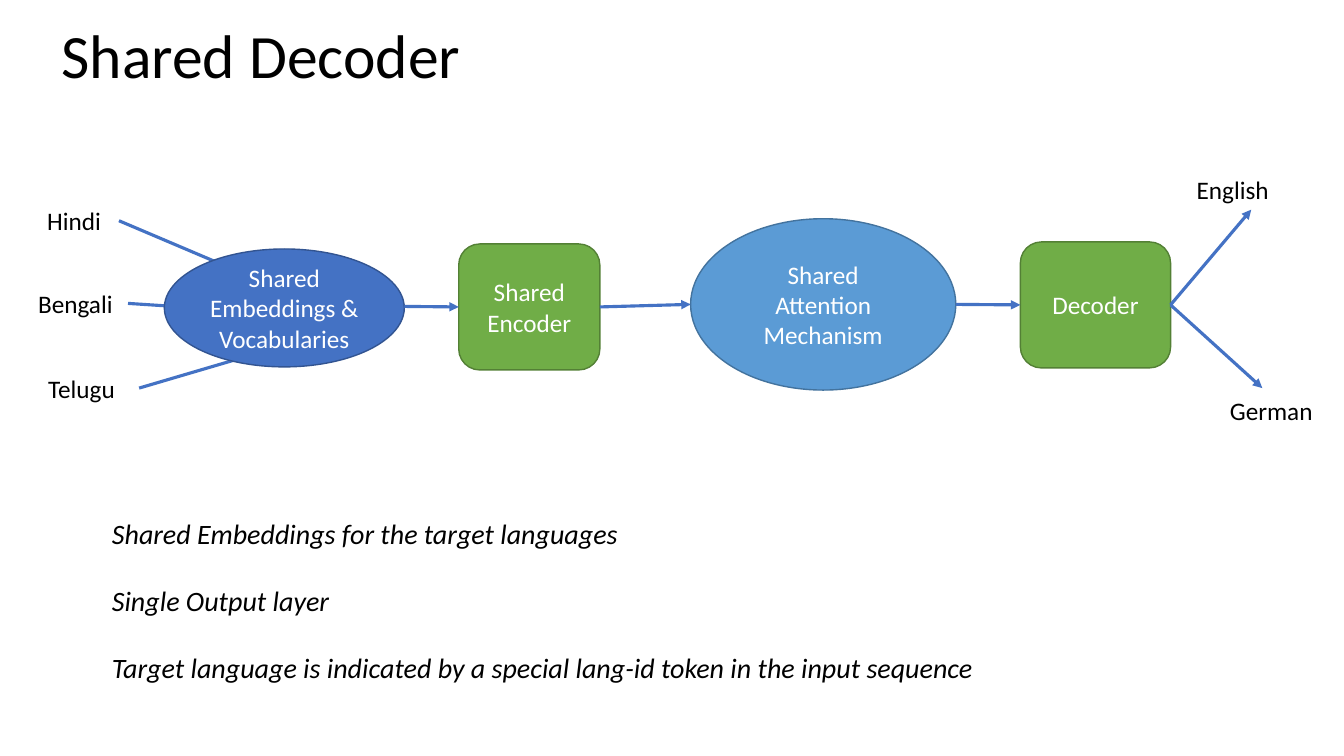
"""Build the Shared Decoder slide: a translation pipeline with three remarks."""
from lxml.etree import SubElement
from pptx import Presentation
from pptx.dml.color import RGBColor
from pptx.enum.shapes import MSO_CONNECTOR as CONN, MSO_SHAPE as SHAPE
from pptx.enum.text import MSO_ANCHOR as ANCHOR, MSO_AUTO_SIZE as FIT, PP_ALIGN as ALIGN
from pptx.oxml.ns import qn
from pptx.util import Inches, Pt

BLACK = RGBColor(0x00, 0x00, 0x00)
WHITE = RGBColor(0xFF, 0xFF, 0xFF)
BLUE = RGBColor(0x44, 0x72, 0xC4)
DARK_BLUE = RGBColor(0x32, 0x54, 0x91)
SKY = RGBColor(0x5B, 0x9B, 0xD5)
DARK_SKY = RGBColor(0x43, 0x73, 0x9E)
GREEN = RGBColor(0x70, 0xAD, 0x47)
DARK_GREEN = RGBColor(0x53, 0x80, 0x35)


def write(sp, text, size=18, color=BLACK, align=ALIGN.LEFT, anchor=ANCHOR.TOP,
          italic=False, spacing=1.0, fit=FIT.NONE):
    tf = sp.text_frame
    tf.word_wrap = True
    tf.auto_size = fit
    tf.vertical_anchor = anchor
    tf.text = text
    for p in tf.paragraphs:
        p.alignment = align
        p.line_spacing = spacing
        p.space_before = Pt(0)
        for r in p.runs:
            r.font.name = "Calibri"
            r.font.size = Pt(size)
            r.font.italic = italic
            r.font.color.rgb = color


def add_arrow(start, end, source=None, target=None):
    c = s.shapes.add_connector(CONN.STRAIGHT, *map(Inches, start + end))
    if source is not None:
        c.begin_connect(source, 3)
    if target is not None:
        c.end_connect(target, 1)
    c.line.color.rgb = BLUE
    c.line.width = Pt(2.25)
    SubElement(c.line._get_or_add_ln(), qn("a:tailEnd"), type="triangle")
    SubElement(c._element.spPr, qn("a:effectLst"))


prs = Presentation()
prs.slide_width, prs.slide_height = Inches(13.33), Inches(7.5)
s = prs.slides.add_slide(prs.slide_layouts[1])

title, body = s.placeholders
title.left, title.top, title.width, title.height = map(Inches, (0.51, 0.11, 11.5, 0.94))
write(title, "Shared Decoder", size=44, anchor=ANCHOR.MIDDLE, spacing=0.9)

body.left, body.top, body.width, body.height = map(Inches, (1.01, 4.74, 11, 2.03))
remarks = [
    "Shared Embeddings for the target languages",
    "Single Output layer",
    "Target language is indicated by a special lang-id token in the input sequence",
]
write(body, "\n".join(remarks), size=20, italic=True, spacing=2.0)
for p in body.text_frame.paragraphs:
    pPr = p._p.get_or_add_pPr()
    pPr.set("marL", "0")
    pPr.set("indent", "0")
    SubElement(pPr, qn("a:buNone"))

labels = [
    ("Hindi", 0.37, 1.99, 0.8),
    ("Bengali", 0.28, 2.81, 1),
    ("Telugu", 0.38, 3.65, 1),
    ("English", 11.77, 1.68, 1.28),
    ("German", 12.1, 3.87, 1.28),
]
for text, x, y, w in labels:
    sp = s.shapes.add_textbox(Inches(x), Inches(y), Inches(w), Inches(0.4))
    write(sp, text, fit=FIT.SHAPE_TO_FIT_TEXT)

input_arrows = [
    ((1.18, 2.19), (2.5, 2.75)),
    ((1.27, 3.01), (2.5, 3.09)),
    ((1.38, 3.85), (2.57, 3.5)),
]
for start, end in input_arrows:
    add_arrow(start, end)

stages = [
    ("Shared Embeddings & Vocabularies", SHAPE.OVAL, 1.63, 2.47, 2.38, 1.17, BLUE, DARK_BLUE),
    ("Shared\nEncoder", SHAPE.ROUNDED_RECTANGLE, 4.55, 2.42, 1.4, 1.25, GREEN, DARK_GREEN),
    ("Shared Attention Mechanism", SHAPE.OVAL, 6.85, 2.17, 2.63, 1.7, SKY, DARK_SKY),
    ("Decoder", SHAPE.ROUNDED_RECTANGLE, 10.12, 2.4, 1.49, 1.25, GREEN, DARK_GREEN),
]
nodes = []
for text, kind, x, y, w, h, fill, line in stages:
    sp = s.shapes.add_shape(kind, *map(Inches, (x, y, w, h)))
    sp.shadow.inherit = False
    sp.fill.solid()
    sp.fill.fore_color.rgb = fill
    sp.line.color.rgb = line
    sp.line.width = Pt(1)
    write(sp, text, color=WHITE, align=ALIGN.CENTER, anchor=ANCHOR.MIDDLE)
    nodes.append(sp)
embeddings, encoder, attention, decoder = nodes

add_arrow((4.01, 3.04), (4.55, 3.04), target=encoder)
add_arrow((5.95, 3.04), (6.85, 3.02), source=encoder)
add_arrow((9.48, 3.02), (10.12, 3.02), target=decoder)
for tip in [(12.41, 2.08), (12.52, 3.85)]:
    add_arrow((11.61, 3.02), tip, source=decoder)

prs.save("out.pptx")
